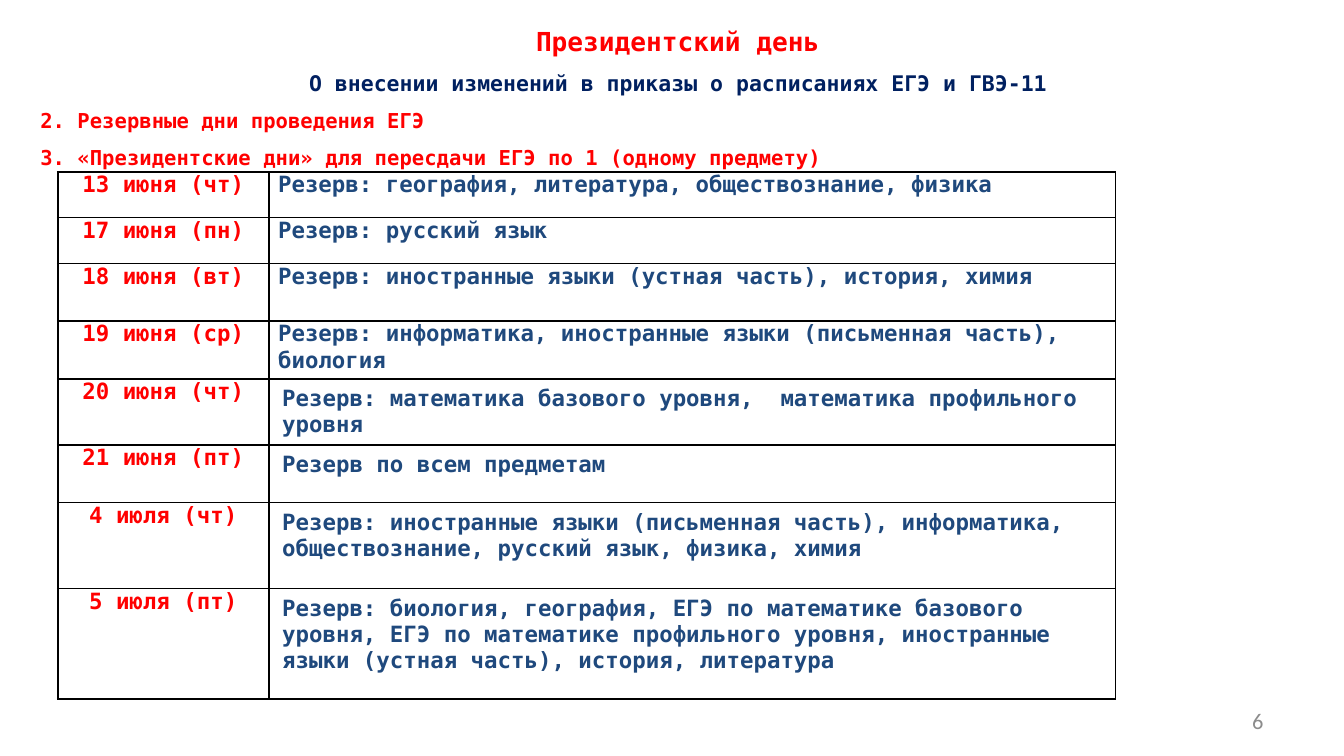
"""Build the slide with the reserve exam days table."""
from dataclasses import dataclass

from lxml.etree import SubElement
from pptx import Presentation
from pptx.dml.color import RGBColor
from pptx.enum.text import MSO_ANCHOR, MSO_AUTO_SIZE, PP_ALIGN as Align
from pptx.oxml.ns import qn
from pptx.util import Inches, Pt

RED = RGBColor(0xFF, 0x00, 0x00)
NAVY = RGBColor(0x00, 0x20, 0x60)
BLUE = RGBColor(0x1F, 0x49, 0x7D)
GRAY = RGBColor(0x8C, 0x8C, 0x8C)
BLACK = RGBColor(0x00, 0x00, 0x00)
MONO = "DejaVu Sans Mono"


@dataclass
class Style:
    size: float
    color: RGBColor
    align: Align = Align.LEFT
    font: str = MONO
    bold: bool = True
    spacing: float = 1.0


@dataclass
class ExamDay:
    date: str
    subjects: str
    height: float
    padded: bool = False


DAYS = [
    ExamDay("13 июня (чт)", "Резерв: география, литература, обществознание, физика", 0.34),
    ExamDay("17 июня (пн)", "Резерв: русский язык", 0.34),
    ExamDay("18 июня (вт)", "Резерв: иностранные языки (устная часть), история, химия", 0.43),
    ExamDay("19 июня (ср)", "Резерв: информатика, иностранные языки (письменная часть), "
            "биология", 0.43),
    ExamDay("20 июня (чт)", "Резерв: математика базового уровня,  математика профильного "
            "уровня", 0.46, True),
    ExamDay("21 июня (пт)", "Резерв по всем предметам", 0.43, True),
    ExamDay("4 июля (чт)", "Резерв: иностранные языки (письменная часть), информатика, "
            "обществознание, русский язык, физика, химия", 0.64, True),
    ExamDay("5 июля (пт)", "Резерв: биология, география, ЕГЭ по математике базового "
            "уровня, ЕГЭ по математике профильного уровня, иностранные языки "
            "(устная часть), история, литература", 0.82, True),
]
HEADINGS = [
    ("Президентский день", Style(14, RED, Align.CENTER)),
    ("О внесении изменений в приказы о расписаниях ЕГЭ и ГВЭ-11",
     Style(11.5, NAVY, Align.CENTER, spacing=1.5)),
    ("2. Резервные дни проведения ЕГЭ", Style(11, RED, spacing=1.5)),
    ("3. «Президентские дни» для пересдачи ЕГЭ по 1 (одному предмету)",
     Style(11, RED, spacing=1.5)),
]


def write(p, text: str, style: Style) -> None:
    p.text = text
    p.alignment = style.align
    p.line_spacing = style.spacing
    p.space_before = Pt(0)
    for r in p.runs:
        r.font.name = style.font
        r.font.size = Pt(style.size)
        r.font.bold = style.bold
        r.font.color.rgb = style.color


def place(sp, left: float, top: float, width: float, height: float, anchor=MSO_ANCHOR.TOP):
    sp.left, sp.top, sp.width, sp.height = map(Inches, (left, top, width, height))
    tf = sp.text_frame
    tf.word_wrap = True
    tf.auto_size = MSO_AUTO_SIZE.NONE
    tf.vertical_anchor = anchor
    return tf


def add_borders(cell) -> None:
    tcPr = cell._tc.get_or_add_tcPr()
    for i, side in enumerate(("lnL", "lnR", "lnT", "lnB")):
        ln = tcPr.makeelement(qn(f"a:{side}"), {"w": str(Pt(1))})
        fill = SubElement(ln, qn("a:solidFill"))
        SubElement(fill, qn("a:srgbClr"), val=str(BLACK))
        tcPr.insert(i, ln)


def fill_cell(cell, text: str, style: Style, padded: bool) -> None:
    cell.margin_left = cell.margin_right = Inches(0.1 if padded else 0.07)
    cell.margin_top = cell.margin_bottom = Inches(0.05 if padded else 0)
    cell.fill.background()
    write(cell.text_frame.paragraphs[0], text, style)
    add_borders(cell)


def add_schedule(s, days: list[ExamDay]) -> None:
    total = sum(day.height for day in days)
    tbl = s.shapes.add_table(len(days), 2, Inches(0.43), Inches(1.28),
                             Inches(7.87), Inches(total)).table
    tbl.first_row = tbl.horz_banding = False
    for column, width in zip(tbl.columns, (1.57, 6.3)):
        column.width = Inches(width)
    for i, day in enumerate(days):
        tbl.rows[i].height = Inches(day.height)
        fill_cell(tbl.cell(i, 0), day.date, Style(12, RED, Align.CENTER), False)
        fill_cell(tbl.cell(i, 1), day.subjects, Style(12, BLUE), day.padded)


def main() -> None:
    prs = Presentation()
    prs.slide_width = Inches(10)
    prs.slide_height = prs.slide_width * 9 // 16
    s = prs.slides.add_slide(prs.slide_layouts[5])

    tf = place(s.shapes.title, 0.2, 0.14, 9.69, 5.35)
    tf.text = "\n".join(text for text, _ in HEADINGS)
    for p, (text, style) in zip(tf.paragraphs, HEADINGS):
        write(p, text, style)

    add_schedule(s, DAYS)

    number = s.shapes.add_textbox(0, 0, 0, 0)
    tf = place(number, 7.17, 5.21, 2.33, 0.3, MSO_ANCHOR.MIDDLE)
    write(tf.paragraphs[0], "6", Style(12, GRAY, Align.RIGHT, "Calibri", False))
    prs.save("out.pptx")


if __name__ == "__main__":
    main()
